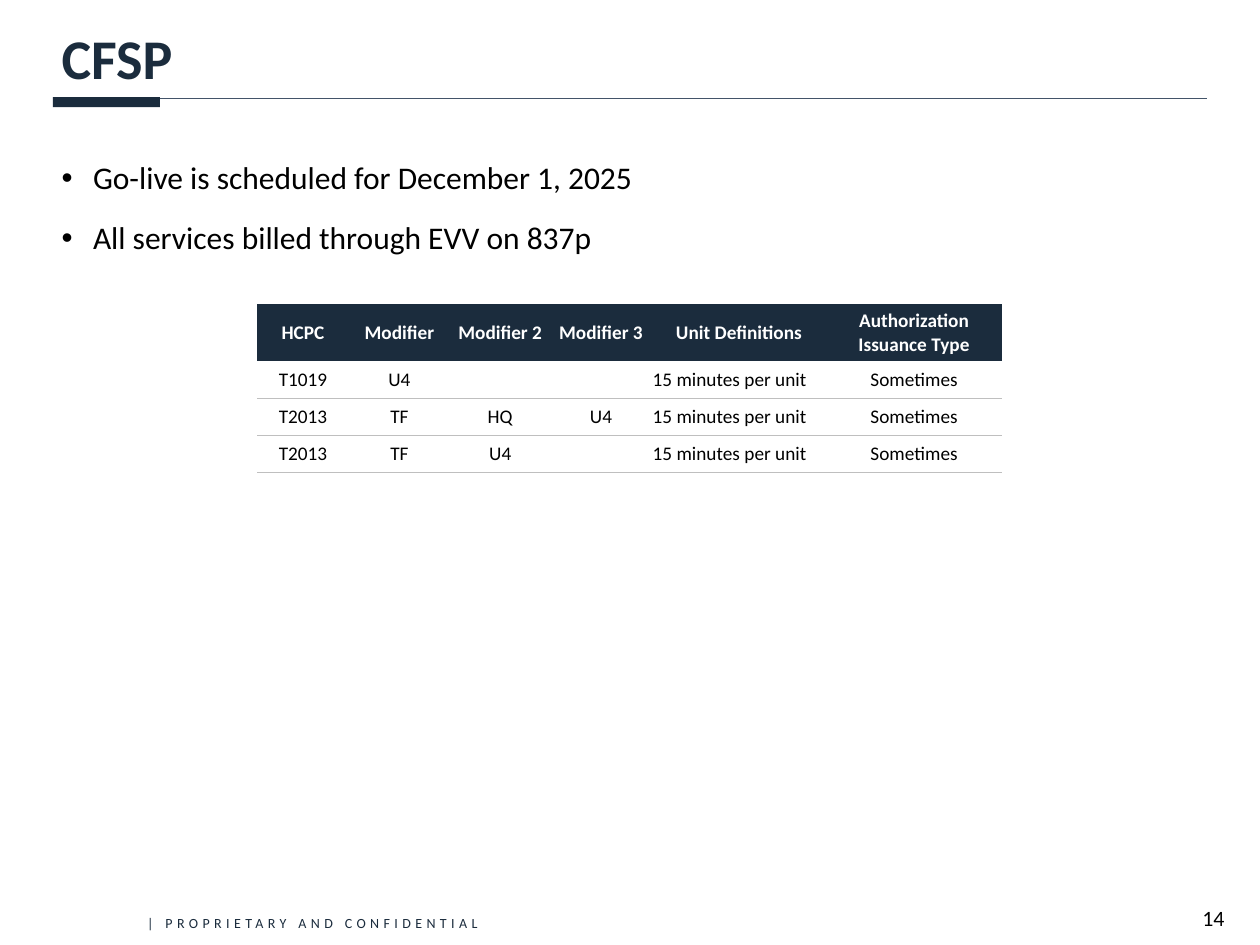
from lxml import etree
from pptx import Presentation
from pptx.dml.color import RGBColor
from pptx.enum.shapes import MSO_CONNECTOR, MSO_SHAPE
from pptx.enum.text import MSO_ANCHOR, PP_ALIGN
from pptx.oxml.ns import qn
from pptx.util import Inches, Pt

LEFT, CENTER = PP_ALIGN.LEFT, PP_ALIGN.CENTER
TOP, MIDDLE = MSO_ANCHOR.TOP, MSO_ANCHOR.MIDDLE
STRAIGHT, RECTANGLE = MSO_CONNECTOR.STRAIGHT, MSO_SHAPE.RECTANGLE
GRID_COLUMNS, GRID_ROWS = 100, 75
PLAIN_TABLE = "{2D5ABB26-0587-4C30-8999-92F81FD0307C}"


def color(value):
    return RGBColor.from_string(value)


def write(paragraph, text, size=18, ink="000000", bold=False, align=LEFT,
          font="Calibri", leading=None, before=None, bullet=None, tracking=None):
    paragraph.alignment = align
    if leading:
        paragraph.line_spacing = leading
    if before:
        paragraph.space_before = Pt(before)
    if bullet:
        properties = paragraph._p.get_or_add_pPr()
        properties.set("marL", str(Inches(0.25)))
        properties.set("indent", str(-Inches(0.25)))
        etree.SubElement(properties, qn("a:buFont"), typeface="Arial")
        etree.SubElement(properties, qn("a:buChar"), char=bullet)
    if not text:
        etree.SubElement(paragraph._p, qn("a:endParaRPr"), sz=str(size * 100))
        return
    run = paragraph.add_run()
    run.text = text
    run.font.name = font
    run.font.size = Pt(size)
    run.font.bold = bold
    run.font.color.rgb = color(ink)
    if tracking:
        run._r.get_or_add_rPr().set("spc", str(int(tracking * 100)))


class Deck:
    navy, slate, rule = "1B2C3D", "435469", "BFBFBF"

    def __init__(self, width, height):
        self.presentation = Presentation()
        self.presentation.slide_width = Inches(width)
        self.presentation.slide_height = Inches(height)
        self.slide = self.presentation.slides.add_slide(
            self.presentation.slide_layouts[6])
        self.shapes = self.slide.shapes

    def x(self, columns):
        return round(self.presentation.slide_width * columns / GRID_COLUMNS)

    def y(self, rows):
        return round(self.presentation.slide_height * rows / GRID_ROWS)

    def box(self, left, top, width, height):
        return self.x(left), self.y(top), self.x(width), self.y(height)

    def text(self, place, lines, anchor=TOP, inset=True, gap=None, **style):
        frame = self.shapes.add_textbox(*self.box(*place)).text_frame
        frame.word_wrap = True
        frame.vertical_anchor = anchor
        if not inset:
            frame.margin_left = frame.margin_right = 0
            frame.margin_top = frame.margin_bottom = 0
        for index, line in enumerate(lines):
            paragraph = frame.add_paragraph() if index else frame.paragraphs[0]
            write(paragraph, line, before=gap if index else None, **style)

    def line(self, left, right, row, ink, weight):
        rule = self.shapes.add_connector(
            STRAIGHT, self.x(left), self.y(row), self.x(right), self.y(row))
        rule.line.color.rgb = color(ink)
        rule.line.width = Pt(weight)
        etree.SubElement(rule._element.spPr, qn("a:effectLst"))

    def bar(self, place, ink):
        bar = self.shapes.add_shape(RECTANGLE, *self.box(*place))
        bar.shadow.inherit = False
        bar.fill.solid()
        bar.fill.fore_color.rgb = color(ink)
        bar.line.fill.background()

    def underline(self, cell):
        border = etree.Element(qn("a:lnB"), w=str(Pt(0.5)))
        fill = etree.SubElement(border, qn("a:solidFill"))
        etree.SubElement(fill, qn("a:srgbClr"), val=self.rule)
        cell._tc.get_or_add_tcPr().insert(0, border)

    def cell(self, cell, text, header, align):
        cell.vertical_anchor = MIDDLE
        cell.margin_left = cell.margin_right = cell.margin_top = Inches(0.01)
        cell.margin_bottom = 0
        if header:
            cell.fill.solid()
            cell.fill.fore_color.rgb = color(self.navy)
        else:
            cell.fill.background()
            self.underline(cell)
        write(cell.text_frame.paragraphs[0], text, size=11, bold=header,
              ink="FFFFFF" if header else "000000", align=align)

    def table(self, left, top, widths, heights, records, left_column):
        table = self.shapes.add_table(
            len(heights), len(widths),
            *self.box(left, top, sum(widths), sum(heights))).table
        table.first_row = table.horz_banding = False
        table._tbl.tblPr.find(qn("a:tableStyleId")).text = PLAIN_TABLE
        for column, width in zip(table.columns, widths):
            column.width = self.x(width)
        for row, height in zip(table.rows, heights):
            row.height = self.y(height)
        for r, record in enumerate(records):
            for c, value in enumerate(record):
                align = LEFT if r and c == left_column else CENTER
                self.cell(table.cell(r, c), value, r == 0, align)


def main():
    deck = Deck(10, 7.5)
    deck.text((10.7, 72.1, 29.4, 2.4), ["| PROPRIETARY AND CONFIDENTIAL"],
              size=8, ink=deck.navy, tracking=2.5)
    deck.text((93.6, 71.8, 5.4, 2.1), ["14"], inset=False, size=12.5, align=CENTER)
    deck.line(4.2, 95.8, 7.8, deck.slate, 0.5)
    deck.bar((4.2, 7.7, 8.5, 0.8), deck.navy)
    deck.text((3.9, 12.4, 92.3, 52.4),
              ["Go-live is scheduled for December 1, 2025",
               "All services billed through EVV on 837p"],
              gap=15, leading=0.9, bullet="•")
    deck.text((3.9, 1.7, 92.3, 6.3), ["CFSP"], anchor=MIDDLE,
              size=32, ink=deck.navy, bold=True, leading=0.9)

    unit, issuance = "15 minutes per unit", "Sometimes"
    services = [
        ("T1019", "U4", "", ""),
        ("T2013", "TF", "HQ", "U4"),
        ("T2013", "TF", "U4", ""),
    ]
    header = ("HCPC", "Modifier", "Modifier 2", "Modifier 3",
              "Unit Definitions", "Authorization Issuance Type")
    deck.table(20.4, 24.1, [7.3] + [8] * 3 + [13.9] * 2,
               [4.55] + [2.94] * len(services),
               [header] + [codes + (unit, issuance) for codes in services],
               left_column=header.index("Unit Definitions"))
    deck.presentation.save("out.pptx")


if __name__ == "__main__":
    main()
